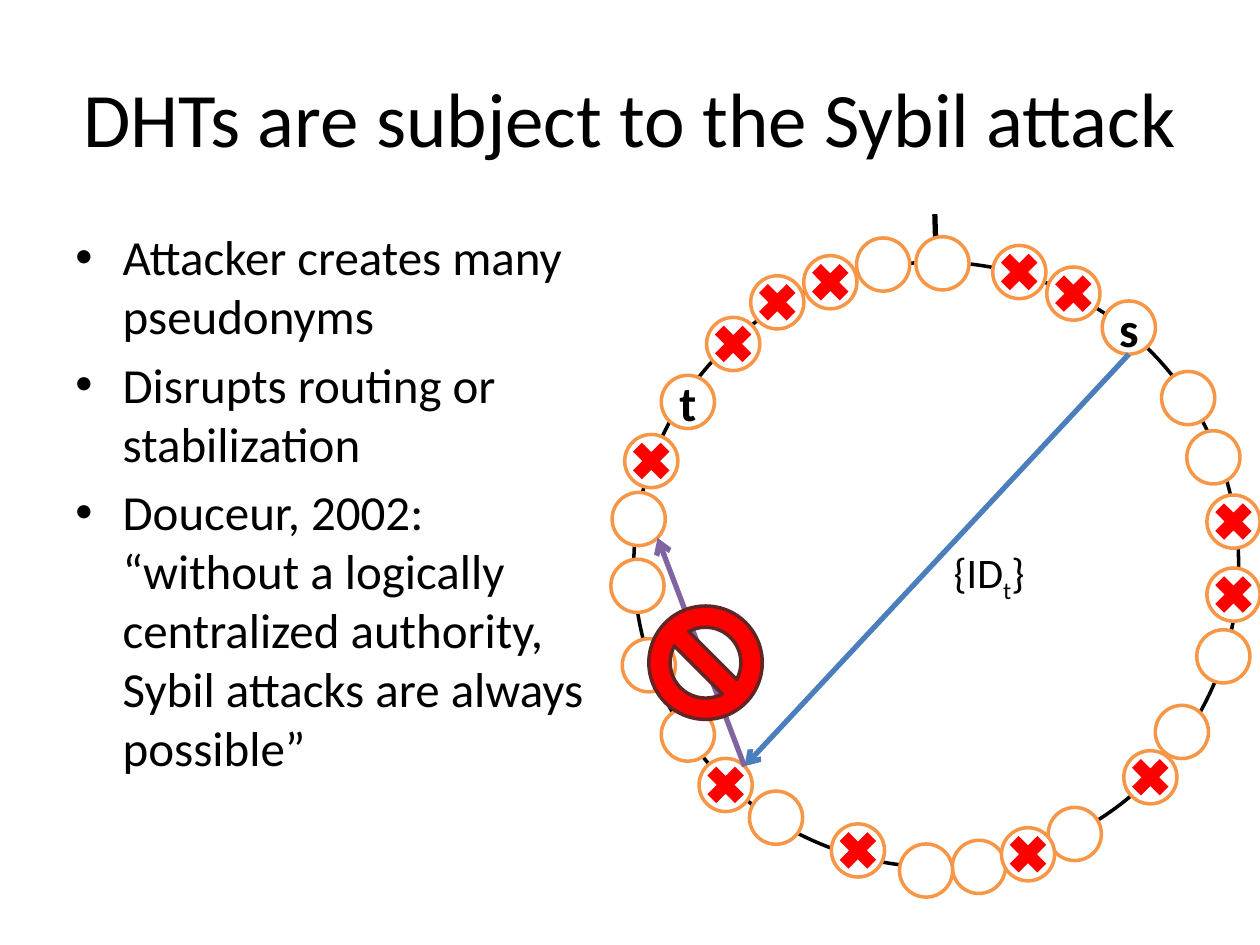
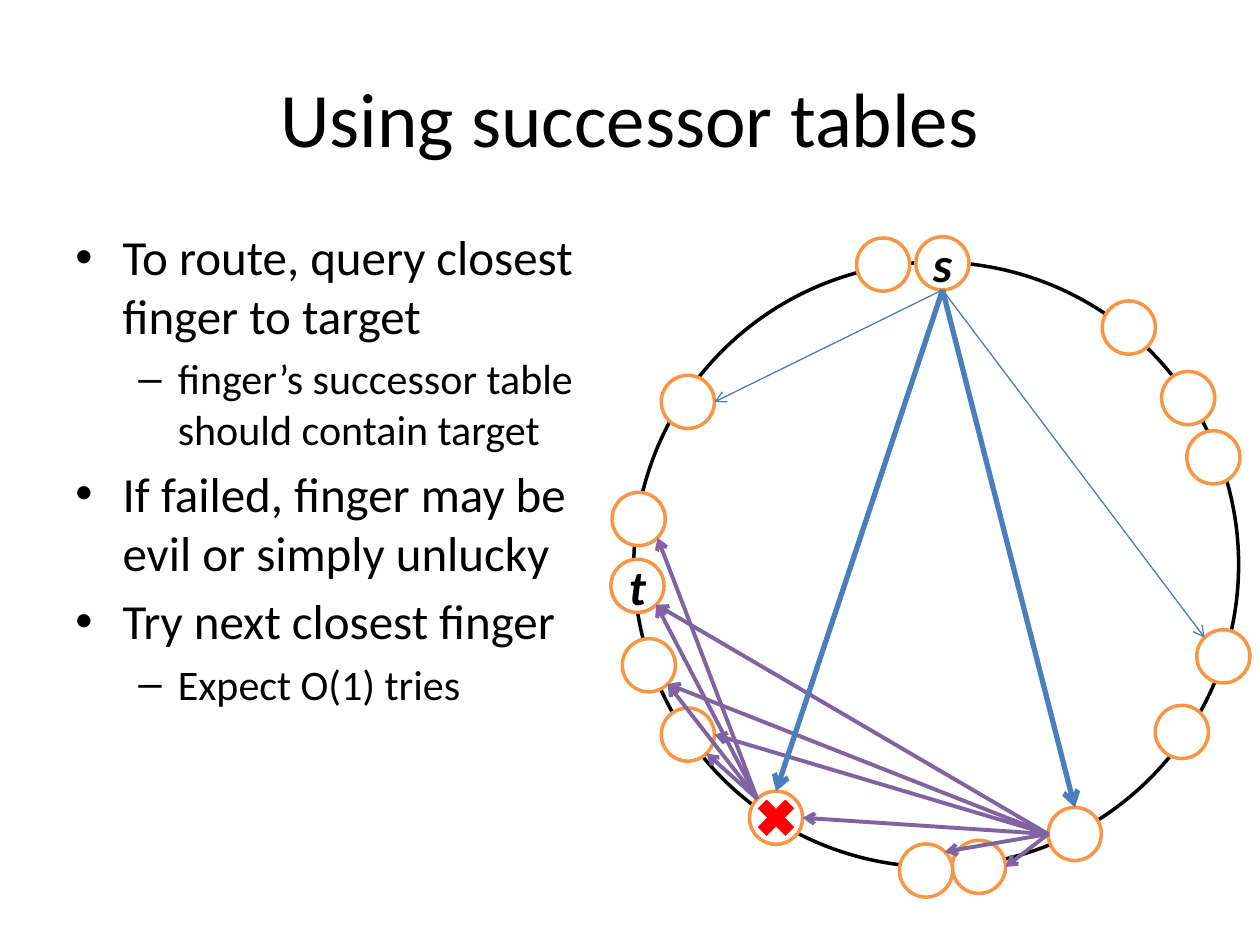
"""Builds two slides on Sybil attacks against a DHT ring and on successor tables."""
from math import sqrt

from lxml.etree import SubElement
from pptx import Presentation
from pptx.dml.color import RGBColor
from pptx.enum.shapes import MSO_CONNECTOR, MSO_SHAPE
from pptx.enum.text import MSO_ANCHOR, PP_ALIGN
from pptx.oxml.ns import qn
from pptx.util import Pt

COLORS = {
    "text": "000000", "paper": "FFFFFF", "node": "F79646", "evil": "FF0000",
    "ban": "632523", "finger": "4B7EBC", "successor": "8064A2",
}
FONT = "Calibri"
TITLE_BOX = (36, 21.6, 648, 90)
BODY_BOX = (36, 126, 318.24, 356.4)
LEVELS = [
    {"bullet": "•", "margin": 27, "hang": 27, "size": 28},
    {"bullet": "–", "margin": 58.5, "hang": 22.5, "size": 24},
]

RING_CENTER, RING_SIZE = (535, 322.6), 345.6
NODE_SIZE = 30.4
NODES = {
    "a": (538.6, 150.5), "b": (645.1, 187.2), "c": (679, 227.5), "d": (693.4, 261.4),
    "e": (699.1, 375.1), "f": (675.4, 418.3), "g": (614.2, 476.6), "h": (559.4, 495.4),
    "i": (529.2, 497.5), "j": (443.5, 467.3), "k": (393.1, 419.8), "l": (370.8, 380.2),
    "m": (364.3, 334.8), "n": (365, 296.6), "o": (393.1, 229.7), "p": (504.7, 151.2),
}
EVIL_FINGER = (414.7, 448.6)
EVIL_NODES = [
    EVIL_FINGER, (587.5, 488.2), (657.4, 444.2), (704.9, 339.8), (704.9, 298.1),
    (613.4, 167.8), (474.5, 161.3), (372.2, 263.5), (444.2, 172.8), (490.3, 486),
    (419, 196.6), (582.5, 155.5),
]
BAN_CENTER, BAN_SIZE = (403.2, 378.7), 64.8
TICK = ((535, 149.8), (534.2, 122.4))
MESSAGE_BOX = (537.8, 308.9, 56.2, 36)
MESSAGE = ("{ID", "t", "}")

SYBIL_TITLE = "DHTs are subject to the Sybil attack"
SYBIL_BULLETS = [
    (0, "Attacker creates many pseudonyms"),
    (0, "Disrupts routing or stabilization"),
    (0, "Douceur, 2002: “without a logically centralized authority, "
        "Sybil attacks are always possible”"),
]
ROUTING_TITLE = "Using successor tables"
ROUTING_BULLETS = [
    (0, "To route, query closest finger to target"),
    (1, "finger’s successor table should contain target"),
    (0, "If failed, finger may be evil or simply unlucky"),
    (0, "Try next closest finger"),
    (1, "Expect O(1) tries"),
]
ARROW_FANS = [
    ("a", "S", "finger", 0.75, [("e", "NW"), ("o", "E")]),
    ("j", "NW", "successor", 2.25, [("k", "SE"), ("l", "SE"), ("m", "SE"), ("n", "SE")]),
    ("g", "W", "successor", 2.25,
     [("h", "E"), ("i", "NE"), ("j", "E"), ("k", "E"), ("l", "SE"), ("m", "SE")]),
    ("a", "S", "finger", 3, [("j", "N"), ("g", "N")]),
]


def color(name):
    return RGBColor.from_string(COLORS[name])


def set_font(paragraph, size, bold=None, italic=None):
    font = paragraph.font
    font.name, font.size, font.bold, font.italic = FONT, Pt(size), bold, italic
    font.color.rgb = color("text")


def add_text_frame(slide, box, wrap=True):
    frame = slide.shapes.add_textbox(*map(Pt, box)).text_frame
    frame.word_wrap = wrap
    return frame


def add_title(slide, text):
    frame = add_text_frame(slide, TITLE_BOX)
    frame.vertical_anchor = MSO_ANCHOR.MIDDLE
    paragraph = frame.paragraphs[0]
    paragraph.text = text
    paragraph.alignment = PP_ALIGN.CENTER
    set_font(paragraph, 44)


def add_bullets(slide, bullets):
    frame = add_text_frame(slide, BODY_BOX)
    for index, (level, text) in enumerate(bullets):
        style = LEVELS[level]
        paragraph = frame.add_paragraph() if index else frame.paragraphs[0]
        paragraph.text = text
        paragraph.level = level
        paragraph.space_before = Pt(0.2 * style["size"] if index else 0)
        properties = paragraph._p.get_or_add_pPr()
        properties.set("marL", str(Pt(style["margin"])))
        properties.set("indent", str(Pt(-style["hang"])))
        SubElement(properties, qn("a:buFont"), typeface="Arial")
        SubElement(properties, qn("a:buChar"), char=style["bullet"])
        set_font(paragraph, style["size"])


def add_centered(slide, kind, center, size, fill=None, line=None):
    left, top = (value - size / 2 for value in center)
    shape = slide.shapes.add_shape(kind, Pt(left), Pt(top), Pt(size), Pt(size))
    shape.shadow.inherit = False
    if fill:
        shape.fill.solid()
        shape.fill.fore_color.rgb = color(fill)
    else:
        shape.fill.background()
    if line:
        shape.line.color.rgb = color(line)
        shape.line.width = Pt(2)
    else:
        shape.line.fill.background()
    return shape


def add_node(slide, center):
    return add_centered(slide, MSO_SHAPE.OVAL, center, NODE_SIZE, "paper", "node")


def add_cross(slide, center):
    add_centered(slide, MSO_SHAPE.MATH_MULTIPLY, center, NODE_SIZE, "evil")


def add_ring(slide, labels, italic=None):
    add_centered(slide, MSO_SHAPE.OVAL, RING_CENTER, RING_SIZE, line="text")
    for name, center in NODES.items():
        node = add_node(slide, center)
        if name in labels:
            frame = node.text_frame
            frame.word_wrap = False
            frame.vertical_anchor = MSO_ANCHOR.MIDDLE
            paragraph = frame.paragraphs[0]
            paragraph.text = labels[name]
            paragraph.alignment = PP_ALIGN.CENTER
            set_font(paragraph, 28, True, italic)


def rim(center, side):
    """Returns the point on a node's rim at a compass side."""
    across = ("E" in side) - ("W" in side)
    down = ("S" in side) - ("N" in side)
    reach = NODE_SIZE / 2 / sqrt(across ** 2 + down ** 2)
    return center[0] + across * reach, center[1] + down * reach


def add_line(slide, start, end, line_color, width, arrow=True):
    connector = slide.shapes.add_connector(MSO_CONNECTOR.STRAIGHT, *map(Pt, (*start, *end)))
    connector.line.color.rgb = color(line_color)
    connector.line.width = Pt(width)
    if arrow:
        SubElement(connector.line._get_or_add_ln(), qn("a:tailEnd"), type="arrow")
    SubElement(connector._element.spPr, qn("a:effectLst"))


def add_message(slide):
    paragraph = add_text_frame(slide, MESSAGE_BOX, wrap=False).paragraphs[0]
    set_font(paragraph, 24)
    runs = [paragraph.add_run() for _ in MESSAGE]
    for run, text in zip(runs, MESSAGE):
        run.text = text
    runs[1]._r.get_or_add_rPr().set("baseline", "-25000")


def start_slide(presentation, title, bullets):
    slide = presentation.slides.add_slide(presentation.slide_layouts[6])
    add_title(slide, title)
    add_bullets(slide, bullets)
    return slide


def build_sybil_slide(presentation):
    slide = start_slide(presentation, SYBIL_TITLE, SYBIL_BULLETS)
    add_line(slide, *TICK, "text", 3, arrow=False)
    add_ring(slide, {"b": "s", "o": "t"})
    relay = rim(EVIL_FINGER, "NE")
    add_line(slide, rim(NODES["b"], "S"), relay, "finger", 3)
    add_message(slide)
    for center in EVIL_NODES:
        add_node(slide, center)
        add_cross(slide, center)
    add_line(slide, relay, rim(NODES["n"], "SE"), "successor", 3)
    add_centered(slide, MSO_SHAPE.NO_SYMBOL, BAN_CENTER, BAN_SIZE, "evil", "ban")


def build_routing_slide(presentation):
    slide = start_slide(presentation, ROUTING_TITLE, ROUTING_BULLETS)
    add_ring(slide, {"a": "s", "m": "t"}, italic=True)
    for source, source_side, line_color, width, targets in ARROW_FANS:
        start = rim(NODES[source], source_side)
        for target, side in targets:
            add_line(slide, start, rim(NODES[target], side), line_color, width)
    add_cross(slide, NODES["j"])


def main():
    presentation = Presentation()
    presentation.slide_width, presentation.slide_height = Pt(720), Pt(540)
    build_sybil_slide(presentation)
    build_routing_slide(presentation)
    presentation.save("out.pptx")


if __name__ == "__main__":
    main()
